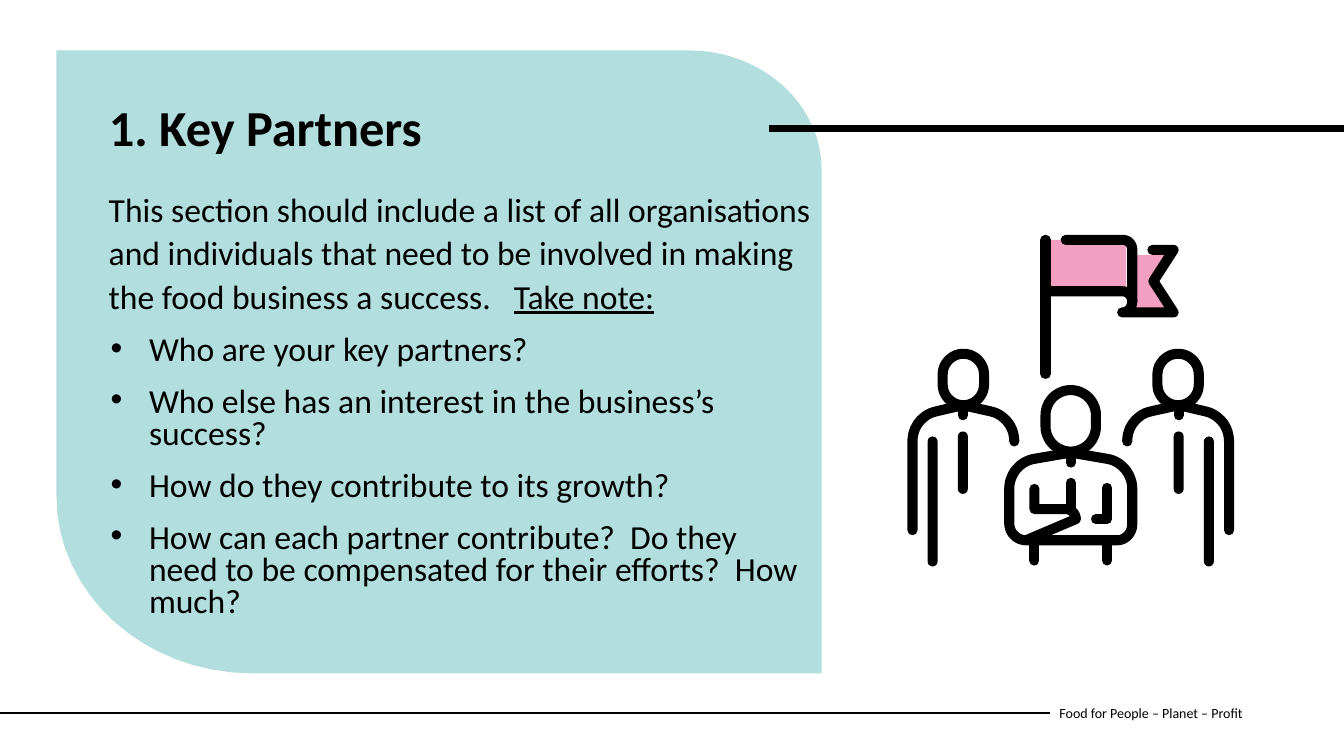
from lxml.etree import SubElement as Sub
from pptx import Presentation
from pptx.dml.color import RGBColor as RGB
from pptx.enum.shapes import MSO_CONNECTOR as CONN, MSO_SHAPE as SHAPE
from pptx.enum.text import MSO_ANCHOR as ANCHOR, MSO_AUTO_SIZE as FIT, PP_ALIGN as ALIGN
from pptx.oxml.ns import qn
from pptx.util import Pt

PX = 9144
BLACK = RGB(0, 0, 0)
MINT = RGB(0xB2, 0xDE, 0xDD)
PINK = RGB(0xF1, 0xA0, 0xC2)
STEPS = 16

deck = Presentation()
deck.slide_width, deck.slide_height = 1333 * PX, 750 * PX
slide = deck.slides.add_slide(deck.slide_layouts[5])
shapes = slide.shapes


def draw(routes, fill=None):
    pen = shapes.build_freeform(*[v * 10 for v in routes[0][0]], scale=PX / 10)
    for route in routes:
        dots = []
        for step in route:
            if len(step) == 2:
                dots.append(step)
                continue
            ends = list(zip(dots[-1], step[:2], step[2:4], step[4:]))
            for n in range(1, STEPS + 1):
                t = n / STEPS
                u = 1 - t
                dots.append(tuple(a * u**3 + 3 * b * u * u * t + 3 * c * u * t * t + d * t**3
                                  for a, b, c, d in ends))
        dots = [(x * 10, y * 10) for x, y in dots]
        if route is not routes[0]:
            pen.move_to(*dots[0])
        pen.add_line_segments(dots[1:], close=dots[0] == dots[-1])
    paint(pen.convert_to_shape(), fill)


def paint(shape, fill=None):
    shape.shadow.inherit = False
    if fill is not None:
        shape.fill.solid()
        shape.fill.fore_color.rgb = fill
        shape.line.fill.background()
        return
    shape.fill.background()
    shape.line.color.rgb = BLACK
    shape.line.width = 10 * PX
    edge = shape.line._get_or_add_ln()
    edge.set("cap", "rnd")
    Sub(edge, qn("a:round"))


draw([[(815, 668), (250, 668), (143, 668, 56, 589, 56, 492), (56, 50),
       (683, 50), (756, 50, 815, 103, 815, 169), (815, 668)]], MINT)

bar = shapes.add_shape(SHAPE.RECTANGLE, 764 * PX, 125 * PX, 569 * PX, 5 * PX)
paint(bar, BLACK)
bar.line.color.rgb = BLACK
bar.line.width = Pt(1.93)
Sub(bar.line._get_or_add_ln(), qn("a:miter")).set("lim", "800000")

rule = shapes.add_connector(CONN.STRAIGHT, 0, 707 * PX, 1041 * PX, 707 * PX)
rule.line.color.rgb = BLACK
rule.line.width = Pt(1.5)
Sub(rule._element.spPr, qn("a:effectLst"))

title = shapes.title
shapes._spTree.append(title._element)
title.left, title.top, title.width, title.height = [v * PX for v in (98, 97, 546, 109)]
body = shapes.add_textbox(98 * PX, 180 * PX, 717 * PX, 433 * PX)
foot = shapes.add_textbox(1041 * PX, 687 * PX, 273 * PX, 40 * PX)

title.text_frame.text = "1. Key Partners"
body.text_frame.text = "\n".join([
    "This section should include a list of all organisations and individuals "
    "that need to be involved in making the food business a success.   ",
    "Who are your key partners?",
    "Who else has an interest in the business’s success?",
    "How do they contribute to its growth?",
    "How can each partner contribute?  Do they need to be compensated "
    "for their efforts?  How much?",
])
foot.text_frame.text = "Food for People – Planet – Profit"
intro, *asks = body.text_frame.paragraphs
note = intro.add_run()
note.text = "Take note:"
note.font.underline = True

for box, size, anchor in ((title, 36, ANCHOR.TOP), (body, 24, ANCHOR.TOP),
                          (foot, 10, ANCHOR.MIDDLE)):
    frame = box.text_frame
    frame.word_wrap = True
    frame.auto_size = FIT.NONE
    frame.vertical_anchor = anchor
    for para in frame.paragraphs:
        para.alignment = ALIGN.LEFT
        for run in para.runs:
            run.font.name = "Calibri"
            run.font.size = Pt(size)
            run.font.color.rgb = BLACK

head = title.text_frame.paragraphs[0]
head.runs[0].font.bold = True
head.line_spacing = 0.9
head.space_before = Pt(10)
intro.line_spacing = 1.07
intro.space_before, intro.space_after = Pt(10), Pt(8)
for ask in asks:
    ask.line_spacing = 0.8
    ask.space_before, ask.space_after = Pt(6), Pt(8)
    props = ask._p.get_or_add_pPr()
    props.set("marL", str(40 * PX))
    props.set("indent", str(-38 * PX))
    Sub(props, qn("a:buFont")).set("typeface", "Arial")
    Sub(props, qn("a:buChar")).set("char", "•")

faces = []
for x, y, w, h in ((935, 351, 41, 51), (1037, 387, 50, 61)):
    r = w / 2
    k = r * 0.45
    right, low = x + w, y + h
    faces.append([(x, y + r), (x, y + k, x + k, y, x + r, y),
                  (right - k, y, right, y + k, right, y + r), (right, low - r),
                  (right, low - k, right - k, low, x + r, low),
                  (x + k, low, x, low - k, x, low - r), (x, y + r)])

draw([[(1123, 253), (1161, 253), (1145, 280), (1163, 306), (1123, 308), (1123, 253)]], PINK)
draw([[(1042, 238), (1117, 238), (1117, 285), (1042, 285), (1042, 238)]], PINK)
draw([[(1098, 484), (1098, 515), (1087, 515)]])

chief = [
    faces[1],
    [(1001, 485), (1001, 470, 1012, 457, 1027, 455), (1062, 449), (1097, 455),
     (1112, 457, 1123, 470, 1123, 485), (1123, 520), (1123, 529, 1116, 536, 1108, 536),
     (1018, 536), (1009, 536, 1001, 529, 1001, 519), (1001, 485)],
    [(1062, 450), (1062, 459)],
    [(1062, 479), (1062, 505)],
    [(1026, 485), (1026, 505), (1057, 505), (1063, 505, 1067, 510, 1067, 515), (1020, 535)],
    [(1026, 536), (1026, 556)],
    [(1098, 536), (1098, 556)],
]
flag = [
    [(1037, 238), (1037, 371)],
    [(1042, 289), (1113, 289), (1119, 289, 1123, 294, 1123, 299)],
    [(1057, 238), (1113, 238), (1119, 238, 1123, 242, 1123, 248), (1123, 299),
     (1123, 305, 1119, 310, 1113, 310), (1164, 310), (1144, 279), (1164, 248), (1143, 248)],
]
aide = [
    faces[0],
    [(905, 526), (905, 438), (905, 423, 915, 411, 929, 408), (955, 402),
     (982, 408), (996, 411, 1006, 423, 1006, 438)],
    [(955, 402), (955, 412)],
]
twin = [[tuple(v if n % 2 else 2124 - v for n, v in enumerate(step)) for step in route]
        for route in aide]
for figure in (chief, flag, aide, twin):
    draw(figure)

for x, y, h in ((920, 433, 129), (950, 428, 62), (1194, 433, 129), (1164, 428, 62)):
    limb = shapes.add_shape(SHAPE.ROUNDED_RECTANGLE, x * PX, y * PX, 10 * PX, h * PX)
    limb.adjustments[0] = 0.5
    paint(limb, BLACK)

deck.save("out.pptx")
